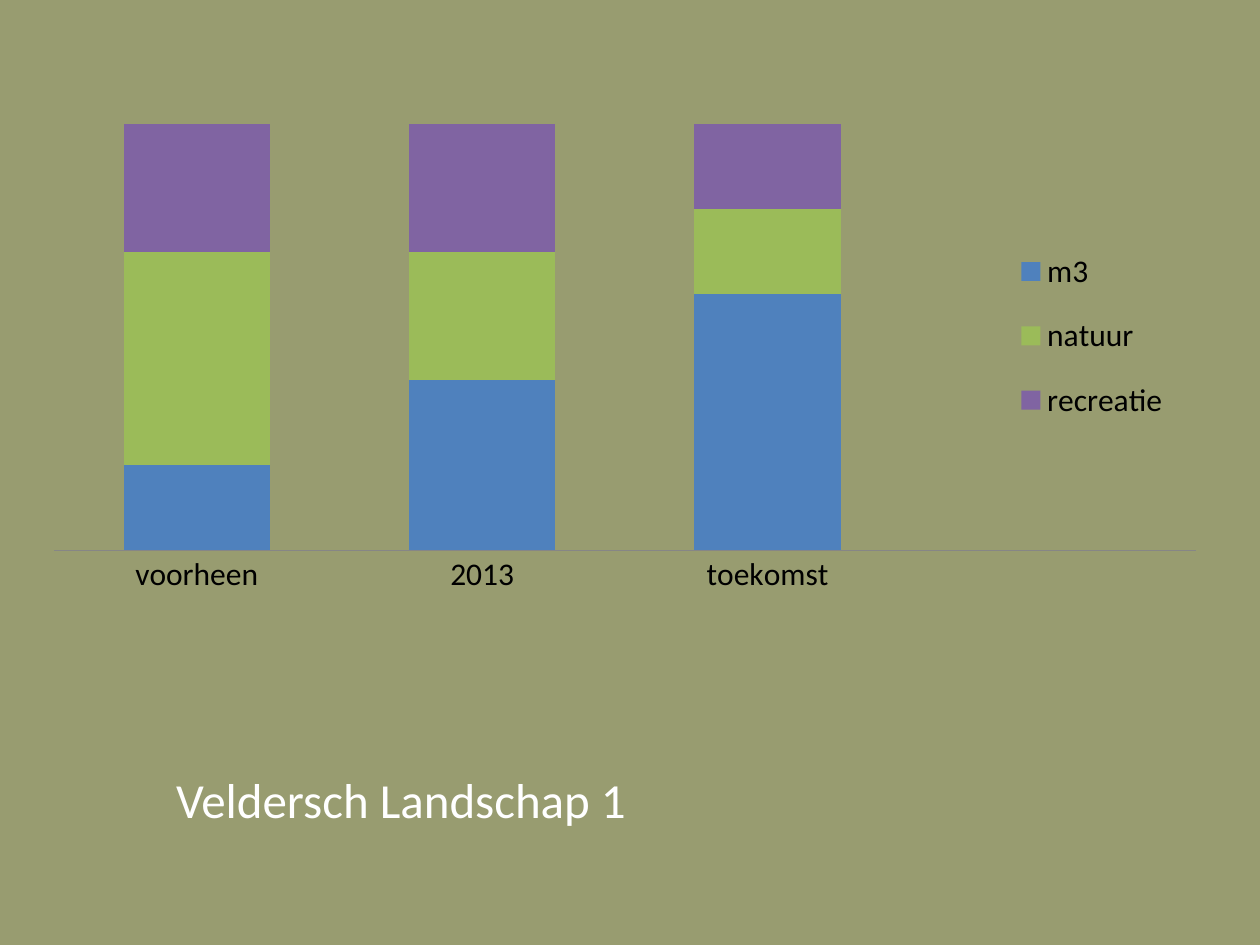
from lxml.etree import SubElement
from pptx import Presentation
from pptx.chart.data import CategoryChartData
from pptx.dml.color import RGBColor
from pptx.enum.chart import XL_CHART_TYPE as ChartType
from pptx.enum.chart import XL_LEGEND_POSITION as LegendPosition
from pptx.enum.chart import XL_TICK_MARK as TickMark
from pptx.enum.text import MSO_AUTO_SIZE as AutoSize
from pptx.oxml.ns import qn
from pptx.util import Cm, Pt

FONT = "Calibri"
OLIVE = RGBColor(0x98, 0x9C, 0x70)
BLACK = RGBColor(0, 0, 0)
WHITE = RGBColor(0xFF, 0xFF, 0xFF)
AXIS_GREY = RGBColor(0x86, 0x86, 0x86)
BLUE = RGBColor(0x4F, 0x81, 0xBD)
GREEN = RGBColor(0x9B, 0xBB, 0x59)
PURPLE = RGBColor(0x80, 0x64, 0xA2)

# The unnamed last category keeps room for the legend.
PERIODS = ["voorheen", "2013", "toekomst", ""]
USES = [
    ("m3", [20, 40, 60, None], BLUE),
    ("natuur", [50, 30, 20, None], GREEN),
    ("recreatie", [30, 30, 20, None], PURPLE),
]


def place(element, x, y, w, h, inner=False):
    """Set a manual layout, in fractions of the chart area."""
    layout = element.find(qn("c:layout"))
    if layout is None:
        layout = element.makeelement(qn("c:layout"))
        position = element.find(qn("c:legendPos"))
        if position is None:
            element.insert(0, layout)
        else:
            position.addnext(layout)
    manual = SubElement(layout, qn("c:manualLayout"))
    settings = [("layoutTarget", "inner")] if inner else []
    settings += [("xMode", "edge"), ("yMode", "edge")]
    settings += [("x", x), ("y", y), ("w", w), ("h", h)]
    for name, value in settings:
        SubElement(manual, qn(f"c:{name}")).set("val", str(value))


def set_font(font, size, color):
    font.name = FONT
    font.size = Pt(size)
    font.color.rgb = color


def add_use_chart(page):
    data = CategoryChartData()
    data.categories = PERIODS
    for name, shares, _ in USES:
        data.add_series(name, shares)
    chart = page.shapes.add_chart(
        ChartType.COLUMN_STACKED_100, Cm(0.71), Cm(0.92), Cm(23.8), Cm(13), data
    ).chart
    chart.has_title = False
    set_font(chart.font, 18, BLACK)

    plot = chart.plots[0]
    plot.gap_width = 95
    plot.overlap = 100
    plot.vary_by_categories = False
    for series, (_, _, color) in zip(plot.series, USES):
        series.format.fill.solid()
        series.format.fill.fore_color.rgb = color

    chart.value_axis.visible = False
    chart.value_axis.has_major_gridlines = False
    axis = chart.category_axis
    axis.major_tick_mark = TickMark.NONE
    axis.format.line.color.rgb = AXIS_GREY
    set_font(axis.tick_labels.font, 18, BLACK)

    chart.has_legend = True
    legend = chart.legend
    legend.position = LegendPosition.TOP
    legend.include_in_layout = False
    set_font(legend.font, 18, BLACK)

    chart_element = chart._chartSpace.chart
    place(chart_element.find(qn("c:legend")), 0.83, 0.28, 0.13, 0.34)
    place(chart_element.plotArea, 0.016, 0.121, 0.967, 0.662, inner=True)


def add_caption(page, text):
    box = page.shapes.add_textbox(Cm(3.3), Cm(15.52), Cm(17), Cm(1.35))
    frame = box.text_frame
    frame.word_wrap = True
    frame.auto_size = AutoSize.SHAPE_TO_FIT_TEXT
    para = frame.paragraphs[0]
    para.line_spacing = 0.9
    para.space_before = Pt(5.6)
    span = para.add_run()
    span.text = text
    set_font(span.font, 28, WHITE)


def main():
    deck = Presentation()
    deck.slide_width, deck.slide_height = Cm(25.4), Cm(19.05)
    page = deck.slides.add_slide(deck.slide_layouts[6])
    page.background.fill.solid()
    page.background.fill.fore_color.rgb = OLIVE
    add_use_chart(page)
    add_caption(page, "Veldersch Landschap 1")
    deck.save("out.pptx")


if __name__ == "__main__":
    main()
